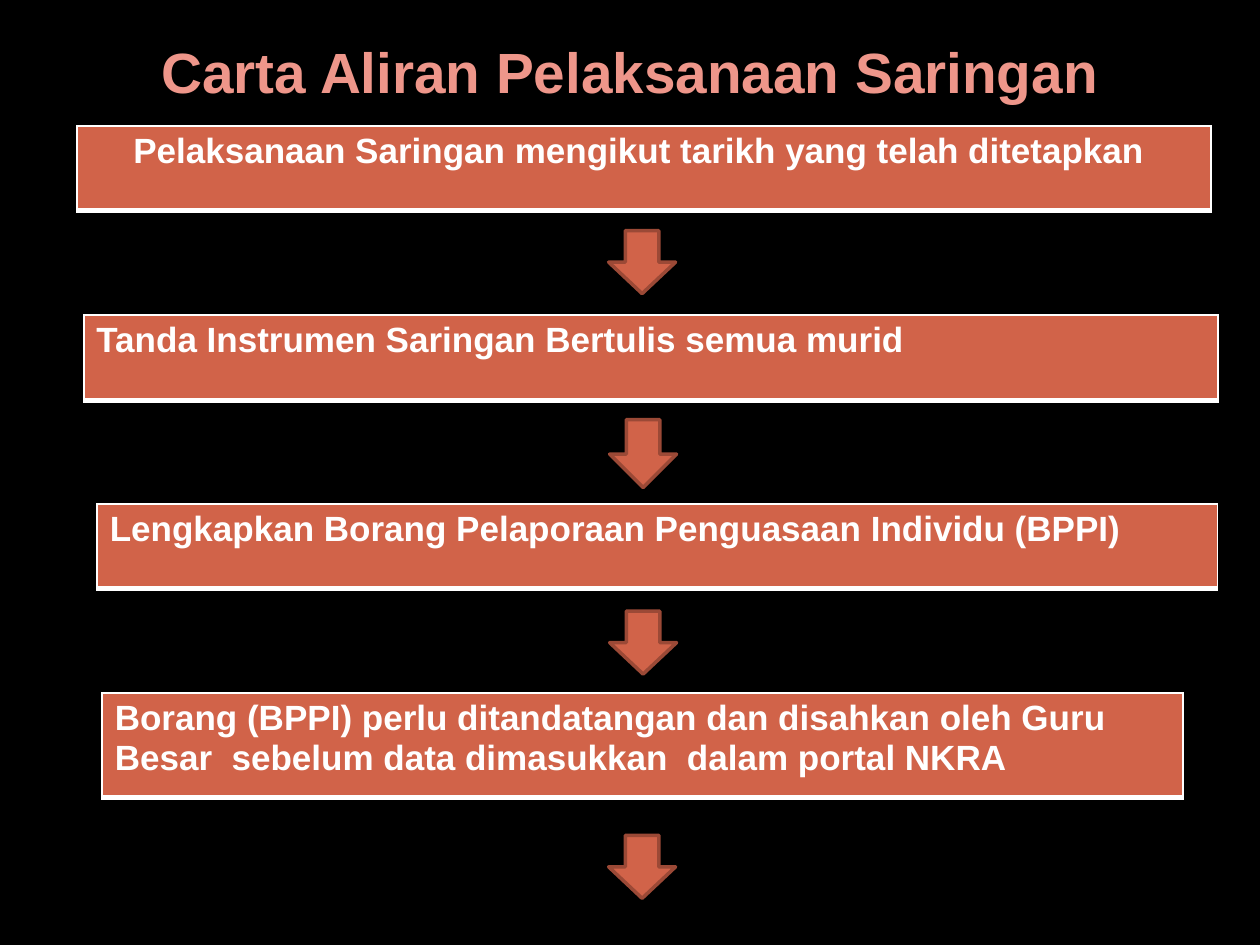
from lxml import etree
from pptx import Presentation
from pptx import util as u
from pptx.dml.color import RGBColor
from pptx.enum import shapes, text
from pptx.oxml.ns import qn

FILL, EDGE, WHITE = "D16349", "9B4936", "FFFFFF"
MID, LEFT = text.PP_ALIGN.CENTER, text.PP_ALIGN.LEFT

STEPS = [
    (1.55, 2.54, 22.86, 1.7, MID,
     "Pelaksanaan Saringan mengikut tarikh yang telah ditetapkan "),
    (1.69, 6.35, 22.86, 1.73, LEFT,
     "Tanda Instrumen Saringan Bertulis semua murid"),
    (1.96, 10.16, 22.58, 1.7, LEFT,
     "Lengkapkan Borang Pelaporaan Penguasaan Individu (BPPI)"),
    (2.06, 13.97, 21.79, 2.11, LEFT,
     "Borang (BPPI) perlu ditandatangan dan disahkan oleh Guru Besar"
     "  sebelum data dimasukkan  dalam portal NKRA"),
]
ARROWS = [(12.27, 4.65, 1.27), (12.29, 8.46, 1.37),
          (12.29, 12.32, 1.27), (12.27, 16.84, 1.27)]


def color(code):
    """Turn a hex string into a colour."""
    return RGBColor.from_string(code)


def box(x, y, w, h):
    """Give left, top, width and height in centimetres."""
    return [u.Cm(n) for n in (x, y, w, h)]


def write(frame, words, size=20, ink=WHITE, align=LEFT):
    """Put bold Arial text in a frame."""
    frame.word_wrap = True
    para = frame.paragraphs[0]
    para.alignment = align
    run = para.add_run()
    run.text = words
    font = run.font
    font.name, font.size, font.bold = "Arial", u.Pt(size), True
    font.color.rgb = color(ink)


def edge(cell, side, width):
    """Add a white border line to one side of a cell."""
    line = etree.SubElement(cell._tc.get_or_add_tcPr(), qn("a:ln" + side),
                            w=str(u.Pt(width)))
    fill = etree.SubElement(line, qn("a:solidFill"))
    etree.SubElement(fill, qn("a:srgbClr"), val=WHITE)


def title(slide, words):
    """Add the heading."""
    frame = slide.shapes.add_textbox(*box(1.27, 0.76, 22.86, 1.35)).text_frame
    frame.vertical_anchor = text.MSO_ANCHOR.MIDDLE
    write(frame, words, size=32.4, ink="EE968A", align=MID)


def step(slide, x, y, w, h, align, words):
    """Add one step as a table of a single cell."""
    table = slide.shapes.add_table(1, 1, *box(x, y, w, h)).table
    cell = table.cell(0, 0)
    for side, width in (("L", 1), ("R", 1), ("T", 1), ("B", 3)):
        edge(cell, side, width)
    cell.fill.solid()
    cell.fill.fore_color.rgb = color(FILL)
    write(cell.text_frame, words, align=align)


def arrow(slide, x, y, h):
    """Add a block arrow that points down."""
    shape = slide.shapes.add_shape(shapes.MSO_SHAPE.DOWN_ARROW,
                                   *box(x, y, 1.35, h))
    shape.shadow.inherit = False
    shape.fill.solid()
    shape.fill.fore_color.rgb = color(FILL)
    shape.line.color.rgb = color(EDGE)
    shape.line.width = u.Pt(2)


def main():
    """Build and save the flow chart slide."""
    deck = Presentation()
    deck.slide_width, deck.slide_height = u.Cm(25.4), u.Cm(19.05)
    slide = deck.slides.add_slide(deck.slide_layouts[6])
    back = slide.background.fill
    back.solid()
    back.fore_color.rgb = color("000000")
    title(slide, "Carta Aliran Pelaksanaan Saringan")
    for item in STEPS:
        step(slide, *item)
    for item in ARROWS:
        arrow(slide, *item)
    deck.save("out.pptx")


if __name__ == "__main__":
    main()
